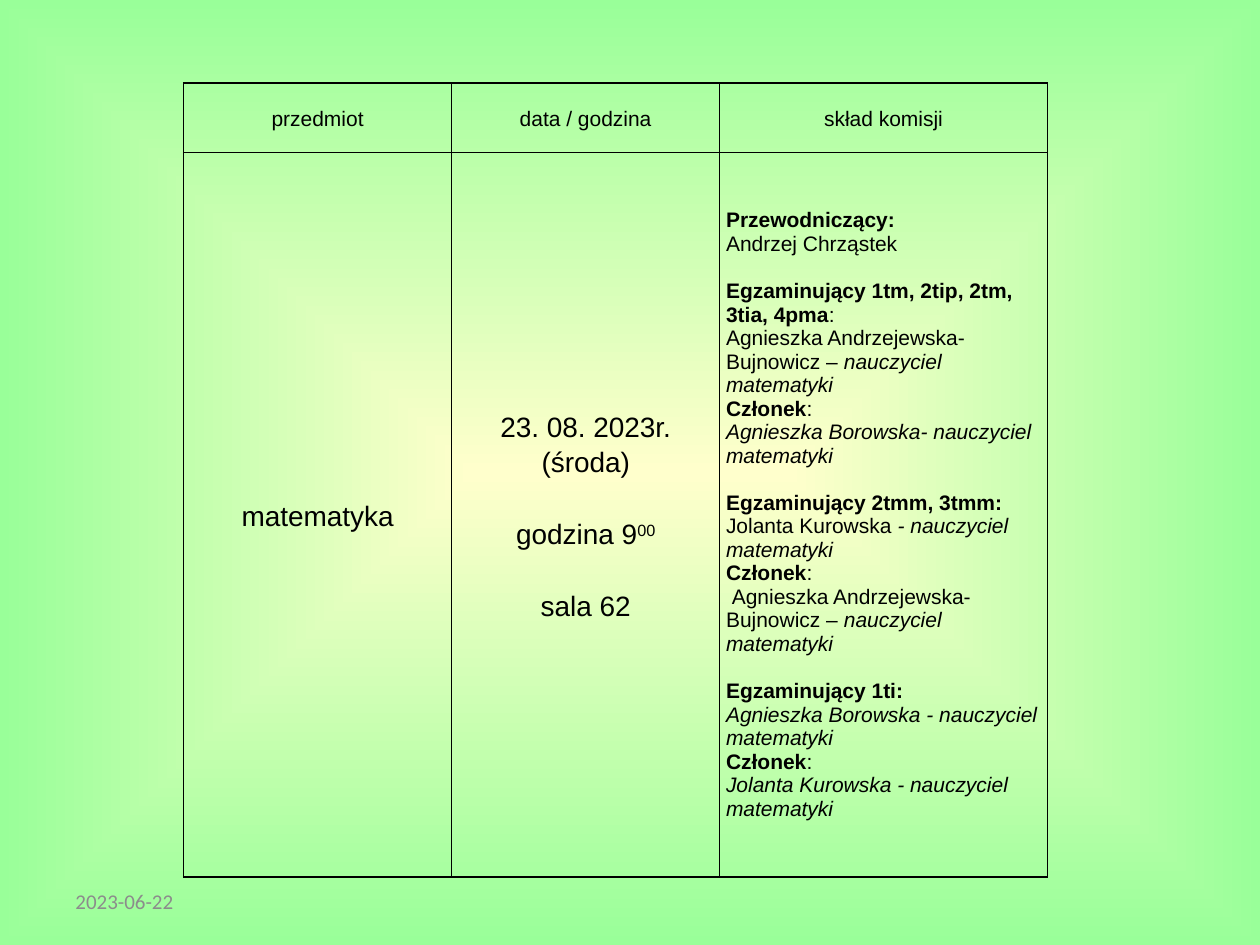
"""Build a slide with the exam timetable and committee for mathematics."""
import lxml.etree
import pptx
import pptx.dml.color
import pptx.enum.text
import pptx.oxml
import pptx.oxml.ns
import pptx.util

Pt = pptx.util.Pt
ALIGN = pptx.enum.text.PP_ALIGN
MIDDLE = pptx.enum.text.MSO_ANCHOR.MIDDLE
qn = pptx.oxml.ns.qn


def color(value):
    return pptx.dml.color.RGBColor.from_string(value)


def add_runs(p, runs, size, font, ink):
    for text, style in runs:
        r = p.add_run()
        r.text = text
        r.font.size = Pt(size)
        r.font.name = font
        r.font.color.rgb = color(ink)
        r.font.bold = style == "b"
        r.font.italic = style == "i"
        if style == "sup":
            r.font._element.set("baseline", "30000")


prs = pptx.Presentation()
prs.slide_width, prs.slide_height = Pt(720), Pt(540)
s = prs.slides.add_slide(prs.slide_layouts[6])

fill = s.background.fill
fill.gradient()
for stop, value in zip(fill.gradient_stops, ("FFFFCC", "99FF99")):
    stop.color.rgb = color(value)
lin = s.background._cSld.find(".//" + qn("a:lin"))
path = lxml.etree.Element(qn("a:path"), {"path": "shape"})
lxml.etree.SubElement(path, qn("a:fillToRect"), dict.fromkeys("ltrb", "50000"))
lin.getparent().replace(lin, path)

sp = s.shapes.add_textbox(Pt(36), Pt(500.4), Pt(168), Pt(28.8))
tf = sp.text_frame
tf.word_wrap = True
tf.vertical_anchor = MIDDLE
add_runs(tf.paragraphs[0], [("2023-06-22", "")], 12, "Calibri", "8C8C8C")

teacher = ("nauczyciel matematyki", "i")
member = [("Członek", "b"), (":", "")]
schedule = [
    [[("23. 08. 2023r.", "")], [("(środa)", "")]],
    [[("godzina 9", ""), ("00", "sup")]],
    [[("sala 62", "")]],
]
committee = [
    [[("Przewodniczący:", "b")], [("Andrzej Chrząstek", "")]],
    [
        [("Egzaminujący 1tm, 2tip, 2tm, 3tia, 4pma", "b"), (":", "")],
        [("Agnieszka Andrzejewska-Bujnowicz – ", ""), teacher],
        member,
        [("Agnieszka Borowska- nauczyciel matematyki", "i")],
    ],
    [
        [("Egzaminujący 2tmm, 3tmm:", "b")],
        [("Jolanta Kurowska ", ""), ("- nauczyciel matematyki", "i")],
        member,
        [("\u00a0Agnieszka Andrzejewska-Bujnowicz – ", ""), teacher],
    ],
    [
        [("Egzaminujący 1ti:", "b")],
        [("Agnieszka Borowska - nauczyciel matematyki", "i")],
        member,
        [("Jolanta Kurowska - nauczyciel matematyki", "i")],
    ],
]
headings = [[[[(text, "")]]] for text in ("przedmiot", "data / godzina", "skład komisji")]
rows = [headings, [[[[("matematyka", "")]]], schedule, committee]]

widths, heights = (153.2, 153.2, 187.2), (39.6, 414)
table = s.shapes.add_table(2, 3, Pt(104.9), Pt(47.5), Pt(sum(widths)), Pt(sum(heights))).table
table.first_row = table.horz_banding = False
for column, width in zip(table.columns, widths):
    column.width = Pt(width)
for row, height in zip(table.rows, heights):
    row.height = Pt(height)

for i, row in enumerate(rows):
    for j, groups in enumerate(row):
        cell = table.cell(i, j)
        cell.vertical_anchor = MIDDLE
        cell.margin_left = cell.margin_right = Pt(3.6)
        cell.margin_top = cell.margin_bottom = 0
        tcPr = cell._tc.get_or_add_tcPr()
        for side in "LRTB":
            ln = lxml.etree.SubElement(tcPr, qn("a:ln" + side), w=str(Pt(1)))
            solid = lxml.etree.SubElement(ln, qn("a:solidFill"))
            lxml.etree.SubElement(solid, qn("a:srgbClr"), val="000000")
        cell.fill.background()

        is_committee = groups is committee
        size = 16 if i == 1 and not is_committee else 12
        tf = cell.text_frame
        p = tf.paragraphs[0]
        for g, group in enumerate(groups):
            for k, runs in enumerate(group):
                if g or k:
                    p = tf.add_paragraph()
                if g and k == 0:
                    p.space_before = Pt(13.5 if is_committee else 20.5)
                p.alignment = ALIGN.LEFT if is_committee else ALIGN.CENTER
                p.line_spacing = 1.0 if is_committee else 1.15
                add_runs(p, runs, size, "Arial", "000000")

prs.save("out.pptx")
